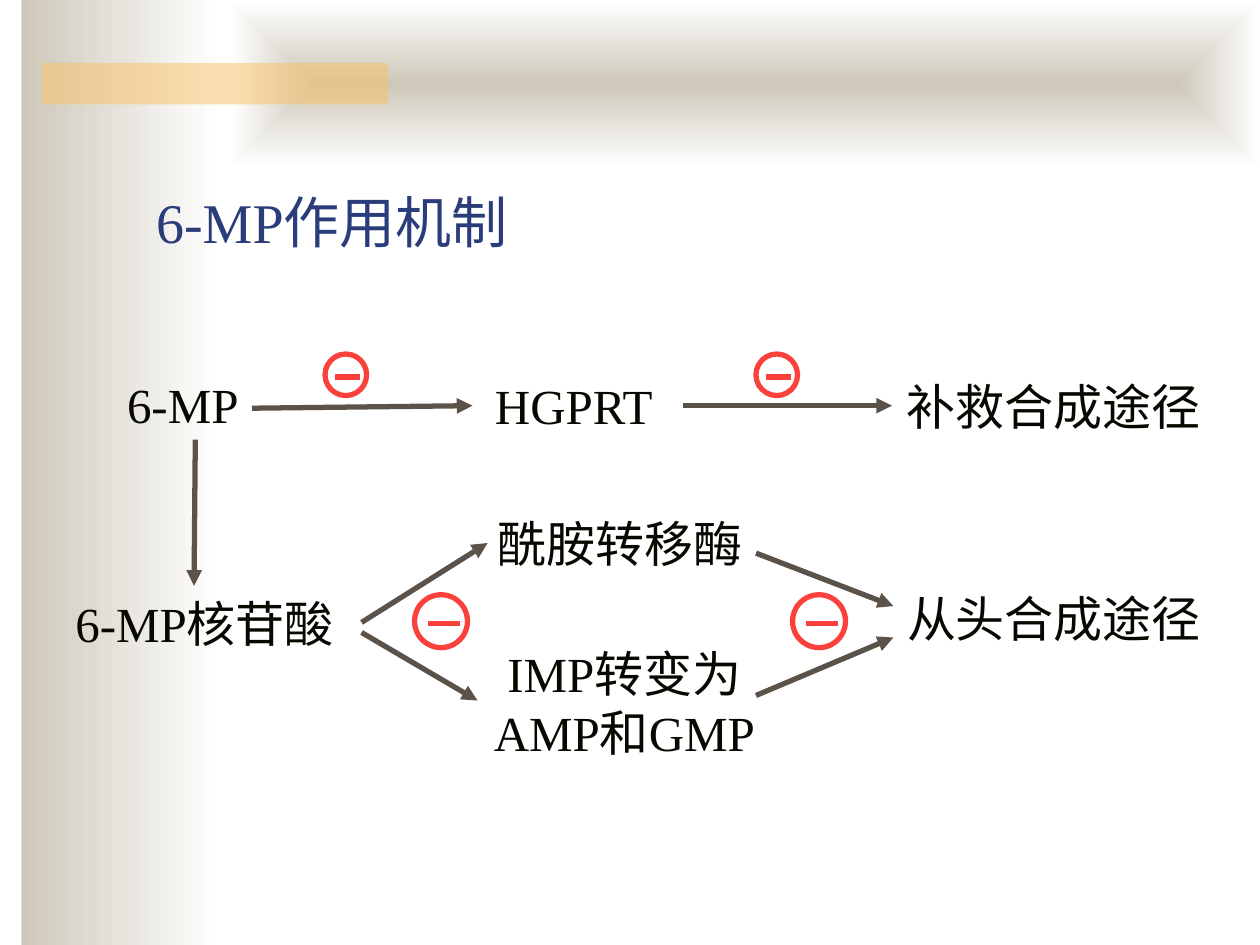
"""Build the slide on how 6-MP blocks both purine synthesis pathways."""
import pptx
import pptx.dml.color
import pptx.enum.shapes
import pptx.enum.text
import pptx.oxml
import pptx.oxml.ns
import pptx.util

RGBColor = pptx.dml.color.RGBColor
SAND = RGBColor(0xCE, 0xC8, 0xBA)
WHITE = RGBColor(0xFF, 0xFF, 0xFF)
AMBER = RGBColor(0xFA, 0xC1, 0x64)
INK = RGBColor(0x08, 0x08, 0x00)
NAVY = RGBColor(0x2A, 0x3D, 0x7A)
BROWN = RGBColor(0x5B, 0x52, 0x49)
RED = RGBColor(0xFA, 0x41, 0x3C)

NAMESPACE = pptx.oxml.ns.nsdecls("a")
SHAPES = pptx.enum.shapes.MSO_SHAPE
ALIGN = pptx.enum.text.PP_ALIGN

deck = pptx.Presentation()
deck.slide_width = pptx.util.Inches(10)
deck.slide_height = pptx.util.Inches(7.5)
COLUMN = deck.slide_width / 100
ROW = deck.slide_height / 75
page = deck.slides.add_slide(deck.slide_layouts[6])


def add_line(start, end, color, arrow=False):
    ends = [round(value * unit) for value, unit in zip(start + end, (COLUMN, ROW) * 2)]
    line = page.shapes.add_connector(pptx.enum.shapes.MSO_CONNECTOR.STRAIGHT, *ends)
    line.line.color.rgb = color
    line.line.width = pptx.util.Pt(3)
    properties = line._element.spPr
    if arrow:
        properties.find(pptx.oxml.ns.qn("a:ln")).append(
            pptx.oxml.parse_xml(f'<a:tailEnd {NAMESPACE} type="triangle"/>'))
    properties.append(pptx.oxml.parse_xml(f"<a:effectLst {NAMESPACE}/>"))


def add_shape(kind, left, top, width, height):
    shape = page.shapes.add_shape(kind, round(left * COLUMN), round(top * ROW),
                                  round(width * COLUMN), round(height * ROW))
    shape.shadow.inherit = False
    return shape


side_band = add_shape(SHAPES.RECTANGLE, 1.7, 0, 15.8, 75)
header_band = add_shape(SHAPES.RECTANGLE, 18.3, 0, 81.7, 13.3)
for band in (side_band, header_band):
    band.line.fill.background()
    band.fill.gradient()
    band.fill.gradient_angle = 0
    for stop, color, position in zip(band.fill.gradient_stops, (SAND, WHITE), (0, 1)):
        stop.color.rgb = color
        stop.position = position

direction = header_band._element.spPr.find(".//" + pptx.oxml.ns.qn("a:lin"))
direction.getparent().replace(direction, pptx.oxml.parse_xml(
    f'<a:path {NAMESPACE} path="shape">'
    '<a:fillToRect l="50000" t="50000" r="50000" b="50000"/></a:path>'))

accent_bar = add_shape(SHAPES.RECTANGLE, 3.3, 5, 27.5, 3.3)
accent_bar.line.fill.background()
accent_bar.fill.solid()
accent_bar.fill.fore_color.rgb = AMBER
accent_bar._element.spPr.find(".//" + pptx.oxml.ns.qn("a:srgbClr")).append(
    pptx.oxml.parse_xml(f'<a:alpha {NAMESPACE} val="50000"/>'))

labels = [
    ("6-MP作用机制", 11.4, 12.3, 35.5, 7.7, 32, NAVY, ALIGN.LEFT, 1.4),
    ("6-MP", 9.1, 29.2, 12.1, 5.7, 28, INK, ALIGN.LEFT, 1),
    ("HGPRT", 38.3, 29.3, 15.8, 5.7, 28, INK, ALIGN.LEFT, 1),
    ("补救合成途径", 71, 29.4, 26.7, 5.7, 28, INK, ALIGN.LEFT, 1),
    ("6-MP核苷酸", 5, 46.6, 23.5, 5.7, 28, INK, ALIGN.LEFT, 1),
    ("酰胺转移酶", 38.5, 40.3, 22.4, 5.7, 28, INK, ALIGN.LEFT, 1),
    ("IMP转变为AMP和GMP", 37.4, 50.6, 24.3, 10.3, 28, INK, ALIGN.CENTER, 1),
    ("从头合成途径", 71, 46.2, 25.5, 5.7, 28, INK, ALIGN.LEFT, 1),
]
for text, left, top, width, height, size, color, alignment, spacing in labels:
    box = page.shapes.add_textbox(round(left * COLUMN), round(top * ROW),
                                  round(width * COLUMN), round(height * ROW))
    box.text_frame.word_wrap = True
    para = box.text_frame.paragraphs[0]
    para.text = text
    para.alignment = alignment
    para.line_spacing = spacing
    para.font.name = "Times New Roman"
    para.font.size = pptx.util.Pt(size)
    para.font.color.rgb = color

arrows = [
    ((20, 32.4), (37.5, 32.2)),
    ((54.2, 32.2), (70.8, 32.2)),
    ((15.5, 34.9), (15.4, 46.5)),
    ((28.7, 49.4), (38.7, 43.1)),
    ((28.7, 50.2), (37.9, 55.6)),
    ((60, 43.9), (70.9, 48.1)),
    ((60, 55.2), (70.9, 50.6)),
]
for start, end in arrows:
    add_line(start, end, BROWN, arrow=True)

inhibitions = [(25.8, 28.1, 3.3), (60, 28.1, 3.3), (32.9, 47.2, 4.2), (62.9, 47.2, 4.2)]
for left, top, size in inhibitions:
    ring = add_shape(SHAPES.OVAL, left, top, size, size)
    ring.fill.background()
    ring.line.color.rgb = RED
    ring.line.width = pptx.util.Pt(3)
    middle = top + 0.55 * size
    add_line((left + 0.25 * size, middle), (left + 0.85 * size, middle), RED)

deck.save("out.pptx")
